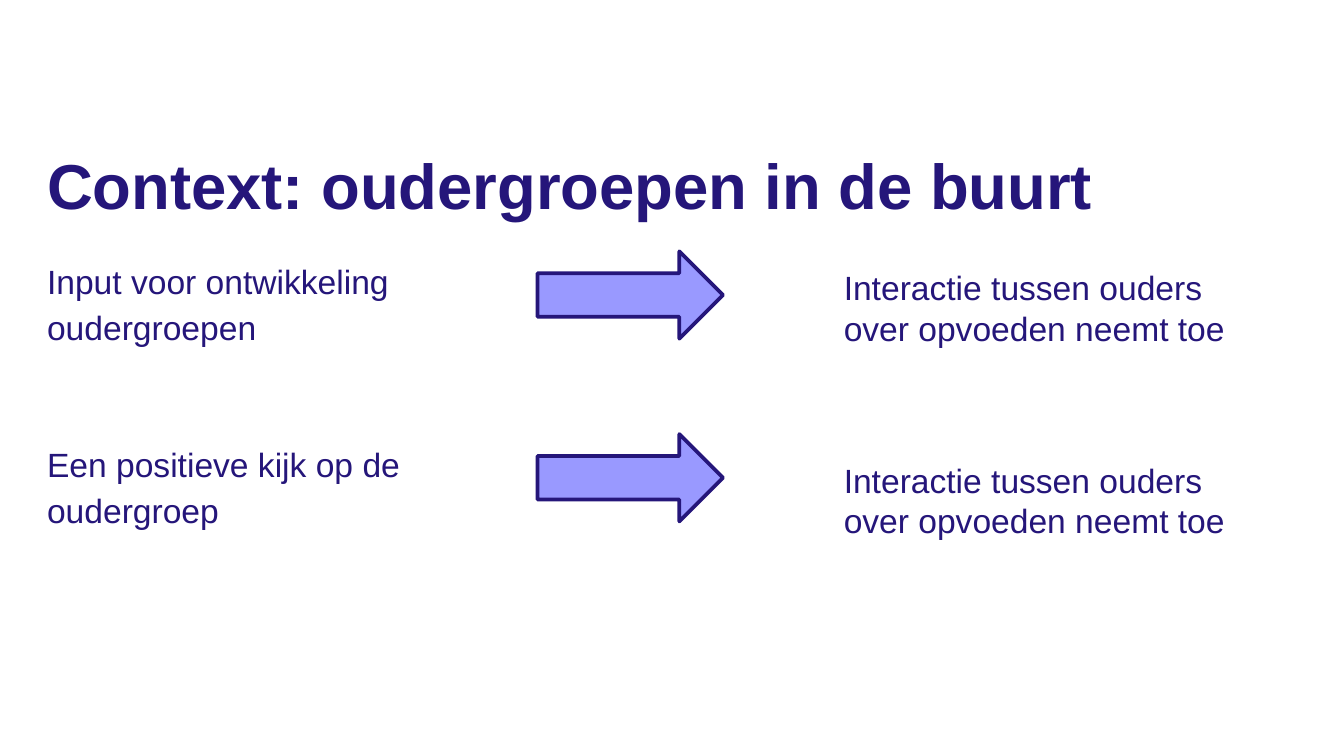
from pptx import Presentation
from pptx.dml.color import RGBColor
from pptx.enum.shapes import MSO_SHAPE
from pptx.enum.text import MSO_ANCHOR, PP_ALIGN
from pptx.util import Inches, Pt

RIGHT_ARROW = MSO_SHAPE.RIGHT_ARROW
TOP = MSO_ANCHOR.TOP
LEFT = PP_ALIGN.LEFT

COLORS = {"ink": "25167A", "arrow": "9999FF"}
TITLE_FONT = {"name": "Arial", "size": Pt(34), "bold": True}
TEXT_FONT = {"name": "Arial", "size": Pt(18), "bold": False}
NO_MARGINS = {"margin_left": 0, "margin_right": 0,
              "margin_top": 0, "margin_bottom": 0}
PLAIN = {"alignment": LEFT, "line_spacing": 1.0, "space_before": Pt(0)}
LOOSE = {**PLAIN, "line_spacing": 1.14}

CONTEXTS = [["Input voor ontwikkeling", "oudergroepen"],
            ["Een positieve kijk op de", "oudergroep"]]
RESULT = [["Interactie tussen ouders"], ["over opvoeden neemt toe"]]


def color(name):
    return RGBColor.from_string(COLORS[name])


def apply(target, values):
    for name, value in values.items():
        setattr(target, name, value)


def write(frame, paragraphs, font, layout, gap=0):
    frame.vertical_anchor = TOP
    for index, lines in enumerate(paragraphs):
        para = frame.paragraphs[0] if index == 0 else frame.add_paragraph()
        apply(para, layout)
        if index:
            para.space_before = Pt(gap)
        for number, line in enumerate(lines):
            if number:
                para.add_line_break()
            span = para.add_run()
            span.text = line
            apply(span.font, font)
            span.font.color.rgb = color("ink")


def add_title(page, box, text):
    title = page.shapes.title
    apply(title, dict(zip(("left", "top", "width", "height"),
                          map(Inches, box))))
    apply(title.text_frame, {"word_wrap": True, **NO_MARGINS})
    write(title.text_frame, [[text]], TITLE_FONT, PLAIN)


def add_contexts(page, box):
    frame = page.shapes.add_textbox(*map(Inches, box)).text_frame
    apply(frame, {"word_wrap": True, **NO_MARGINS})
    write(frame, CONTEXTS, TEXT_FONT, LOOSE, gap=49)


def add_arrow(page, box):
    arrow = page.shapes.add_shape(RIGHT_ARROW, *map(Inches, box))
    arrow.shadow.inherit = False
    arrow.fill.solid()
    arrow.fill.fore_color.rgb = color("arrow")
    arrow.line.color.rgb = color("ink")
    arrow.line.width = Pt(2)


def add_result(page, box):
    frame = page.shapes.add_textbox(*map(Inches, box)).text_frame
    frame.word_wrap = False
    write(frame, RESULT, TEXT_FONT, PLAIN)


def main():
    deck = Presentation()
    deck.slide_width = Inches(10)
    deck.slide_height = deck.slide_width * 9 // 16
    page = deck.slides.add_slide(deck.slide_layouts[5])
    add_title(page, (0.35, 1.09, 9.29, 1.21),
              "Context: oudergroepen in de buurt")
    add_contexts(page, (0.35, 1.9, 5.02, 2.98))
    for row in range(len(CONTEXTS)):
        add_arrow(page, (4, 1.87 + row * 1.36, 1.38, 0.65))
        add_result(page, (6.18, 1.94 + row * 1.43, 3.06, 1.01))
    deck.save("out.pptx")


if __name__ == "__main__":
    main()
